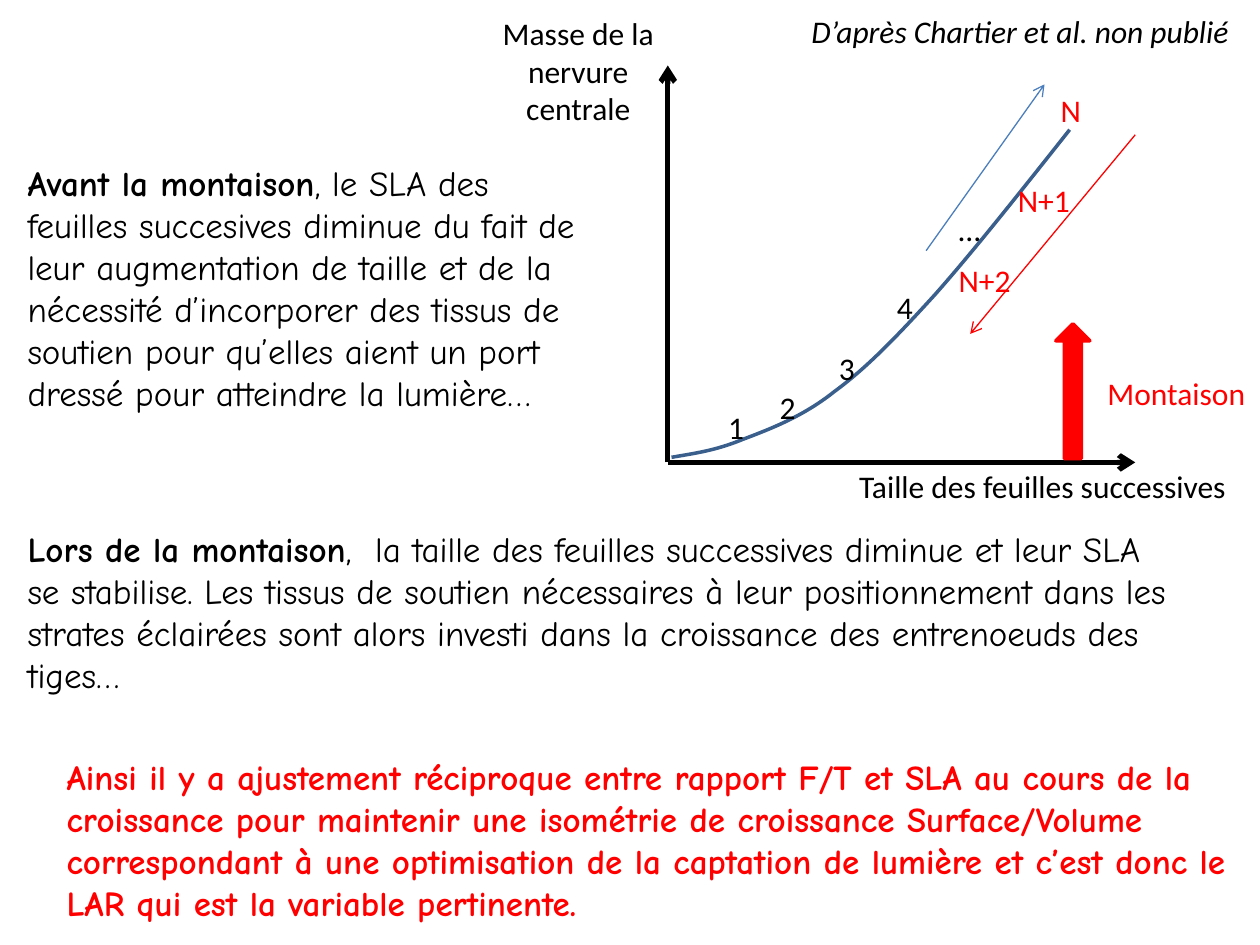
from lxml.etree import SubElement
from pptx import Presentation
from pptx.dml.color import RGBColor
from pptx.enum.shapes import MSO_CONNECTOR, MSO_SHAPE
from pptx.enum.text import PP_ALIGN
from pptx.oxml.ns import qn
from pptx.util import Inches, Pt

THEME = {
    "black": RGBColor(0, 0, 0),
    "red": RGBColor(0xFF, 0, 0),
    "curve": RGBColor(0x3A, 0x5F, 0x8C),
    "blue": RGBColor(0x4B, 0x7E, 0xBC),
    "label_font": "Calibri", "label_size": Pt(18),
    "body_font": "Comic Neue", "body_size": Pt(20),
}

ORIGIN = (5.3, 3.67)
# start, end, colour, width in points
ARROWS = [
    (ORIGIN, (9.01, 3.67), "black", 3),
    (ORIGIN, (5.3, 0.52), "black", 3),
    ((7.35, 1.99), (8.29, 0.67), "blue", 0.75),
    ((9.01, 1.07), (7.7, 2.65), "red", 0.75),
]

# Start point, then two control points and an end point per Bézier segment
CURVE = [
    (5.33, 3.63),
    (5.5, 3.6), (5.67, 3.58), (5.89, 3.49),
    (6.1, 3.41), (6.37, 3.31), (6.62, 3.11),
    (6.88, 2.92), (7.11, 2.68), (7.42, 2.34),
    (7.73, 1.99), (8.11, 1.51), (8.49, 1.03),
]

# text, left, top, width, colour
GRAPH_LABELS = [
    ("1", 5.68, 3.19, 0.33, "black"),
    ("2", 6.09, 3.03, 0.33, "black"),
    ("3", 6.56, 2.72, 0.33, "black"),
    ("4", 7.02, 2.24, 0.33, "black"),
    ("…", 7.51, 1.62, 0.38, "black"),
    ("N", 8.32, 0.67, 0.36, "red"),
    ("N+1", 7.98, 1.39, 0.62, "red"),
    ("N+2", 7.51, 2.02, 0.62, "red"),
    ("Taille des feuilles successives", 6.72, 3.66, 3.15, "black"),
    ("Montaison", 8.69, 2.92, 1.31, "red"),
]
LABEL_HEIGHT = 0.4
VERTICAL_TITLE = ("Masse de la nervure centrale", (3.66, 0.06, 1.86, 1.01))
BOLTING_ARROW = (8.38, 2.57, 0.27, 1.07)
CREDIT = ("D’après Chartier et al. non publié", (6.34, 0.05, 3.58, LABEL_HEIGHT))

# bold text, regular text, box, colour
PARAGRAPHS = [
    ("Avant la montaison",
     ", le SLA des feuilles succesives diminue du fait de leur augmentation de "
     "taille et de la nécessité d’incorporer des tissus de soutien pour qu’elles "
     "aient un port dressé pour atteindre la lumière…",
     (0.12, 1.23, 4.72, 2.46), "black"),
    ("Lors de la montaison",
     ",  la taille des feuilles successives diminue et leur SLA se stabilise. Les "
     "tissus de soutien nécessaires à leur positionnement dans les strates "
     "éclairées sont alors investi dans la croissance des entrenoeuds des tiges…",
     (0.12, 4.14, 9.29, 1.45), "black"),
    ("Ainsi il y a ajustement réciproque entre rapport F/T et SLA au cours de la "
     "croissance pour maintenir une isométrie de croissance Surface/Volume "
     "correspondant à une optimisation de la captation de lumière et c’est donc "
     "le LAR qui est la variable pertinente.",
     "", (0.43, 5.95, 9.44, 1.45), "red"),
]


def inches(values):
    return [Inches(value) for value in values]


def add_text(shapes, runs, box, color, style="label", wrap=False):
    """Add a one-paragraph text box; runs holds (text, bold) pairs."""
    frame = shapes.add_textbox(*inches(box)).text_frame
    frame.word_wrap = wrap
    paragraph = frame.paragraphs[0]
    paragraph.font.name = THEME[style + "_font"]
    paragraph.font.size = THEME[style + "_size"]
    paragraph.font.color.rgb = THEME[color]
    for text, bold in runs:
        run = paragraph.add_run()
        run.text = text
        run.font.bold = bold
    return paragraph


def set_line(shape, color, width):
    shape.line.color.rgb = THEME[color]
    shape.line.width = Pt(width)


def add_arrow(shapes, start, end, color, width):
    arrow = shapes.add_connector(MSO_CONNECTOR.STRAIGHT, *inches(start + end))
    set_line(arrow, color, width)
    properties = arrow._element.spPr
    SubElement(properties.find(qn("a:ln")), qn("a:tailEnd"), type="arrow")
    SubElement(properties, qn("a:effectLst"))


def add_curve(shapes, points):
    """Draw a freeform through all points, then turn each three lines into a Bézier."""
    start, *rest = [tuple(inches(point)) for point in points]
    builder = shapes.build_freeform(*start)
    builder.add_line_segments(rest, close=False)
    curve = builder.convert_to_shape()
    curve.shadow.inherit = False
    curve.fill.background()
    set_line(curve, "curve", 2)
    outline = next(curve._element.iter(qn("a:path")))
    segments = outline.findall(qn("a:lnTo"))
    for first in range(0, len(segments), 3):
        bezier = SubElement(outline, qn("a:cubicBezTo"))
        for segment in segments[first:first + 3]:
            bezier.append(segment[0])
            outline.remove(segment)


def add_graph(slide):
    shapes = slide.shapes.add_group_shape().shapes
    for arrow in ARROWS[:2]:
        add_arrow(shapes, *arrow)
    add_curve(shapes, CURVE)
    for text, left, top, width, color in GRAPH_LABELS:
        add_text(shapes, [(text, False)], (left, top, width, LABEL_HEIGHT), color)
    for arrow in ARROWS[2:]:
        add_arrow(shapes, *arrow)
    bolting = shapes.add_shape(MSO_SHAPE.UP_ARROW, *inches(BOLTING_ARROW))
    bolting.shadow.inherit = False
    bolting.fill.solid()
    bolting.fill.fore_color.rgb = THEME["red"]
    set_line(bolting, "red", 2)
    text, box = VERTICAL_TITLE
    title = add_text(shapes, [(text, False)], box, "black", wrap=True)
    title.alignment = PP_ALIGN.CENTER


def main():
    presentation = Presentation()
    presentation.slide_width, presentation.slide_height = inches((10, 7.5))
    slide = presentation.slides.add_slide(presentation.slide_layouts[6])
    add_graph(slide)
    for bold, regular, box, color in PARAGRAPHS:
        runs = [(text, is_bold) for text, is_bold in ((bold, True), (regular, False)) if text]
        add_text(slide.shapes, runs, box, color, "body", wrap=True)
    text, box = CREDIT
    add_text(slide.shapes, [(text, False)], box, "black").font.italic = True
    presentation.save("out.pptx")


if __name__ == "__main__":
    main()
